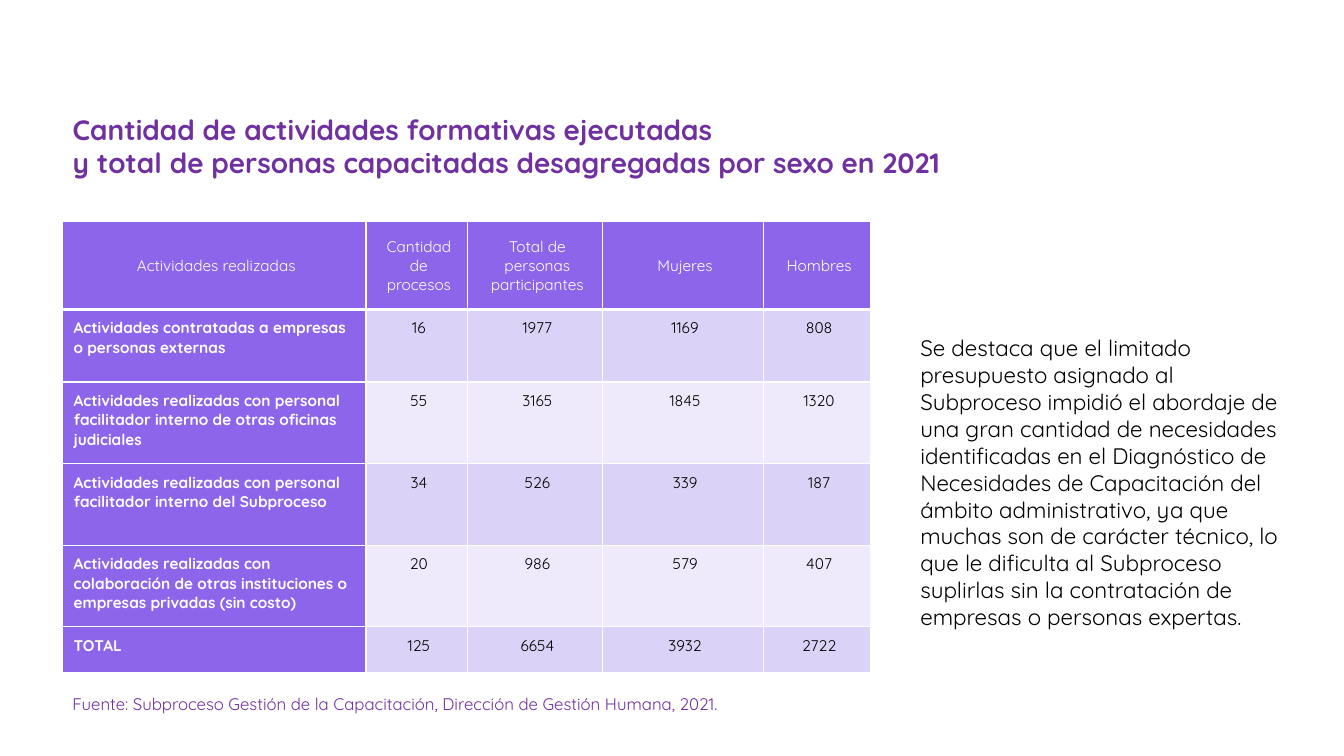
from lxml import etree
from pptx import Presentation
from pptx.dml.color import RGBColor
from pptx.enum import text as t
from pptx.oxml import ns
from pptx.util import Inches, Pt

FONT = "Quicksand"
PURPLE = RGBColor(0x70, 0x30, 0xA0)
VIOLET = RGBColor(0x8D, 0x65, 0xEA)
LILAC = RGBColor(0xDB, 0xD3, 0xF7)
PALE_LILAC = RGBColor(0xEE, 0xEA, 0xFB)
WHITE = RGBColor(0xFF, 0xFF, 0xFF)
BLACK = RGBColor(0, 0, 0)

TITLE = ("Cantidad de actividades formativas ejecutadas\v"
         "y total de personas capacitadas desagregadas por sexo en 2021")
SOURCE = "Fuente: Subproceso Gestión de la Capacitación, Dirección de Gestión Humana, 2021."
COMMENT = (
    "Se destaca que el limitado presupuesto asignado al Subproceso impidió el abordaje de "
    "una gran cantidad de necesidades identificadas en el Diagnóstico de Necesidades de "
    "Capacitación del ámbito administrativo, ya que muchas son de carácter técnico, lo que "
    "le dificulta al Subproceso suplirlas sin la contratación de empresas o personas expertas."
)
ACTIVITIES = [
    ("Actividades realizadas", "Cantidad de procesos", "Total de personas participantes",
     "Mujeres", "Hombres"),
    ("Actividades contratadas a empresas o personas externas", 16, 1977, 1169, 808),
    ("Actividades realizadas con personal facilitador interno de otras oficinas judiciales",
     55, 3165, 1845, 1320),
    ("Actividades realizadas con personal facilitador interno del Subproceso",
     34, 526, 339, 187),
    ("Actividades realizadas con colaboración de otras instituciones o empresas privadas "
     "(sin costo)", 20, 986, 579, 407),
    ("TOTAL", 125, 6654, 3932, 2722),
]
COLUMN_WIDTHS = [3.01, 1.01, 1.34, 1.59, 1.07]
ROW_HEIGHTS = [0.87, 0.72, 0.81, 0.81, 0.81, 0.45]


def write_text(frame, content, size, color, bold=False, align=t.PP_ALIGN.LEFT,
               anchor=t.MSO_ANCHOR.TOP):
    frame.word_wrap = True
    frame.vertical_anchor = anchor
    paragraph = frame.paragraphs[0]
    paragraph.text = content
    paragraph.alignment = align
    for run in paragraph.runs:
        font = run.font
        font.name, font.size, font.bold = FONT, Pt(size), bold
        font.color.rgb = color


def add_title(slide, left, top, width, height):
    title = slide.shapes.title
    title.left, title.top = Inches(left), Inches(top)
    title.width, title.height = Inches(width), Inches(height)
    write_text(title.text_frame, TITLE, 20, PURPLE, bold=True, anchor=t.MSO_ANCHOR.MIDDLE)


def add_text_box(slide, content, left, top, width, height, **text_format):
    box = slide.shapes.add_textbox(Inches(left), Inches(top), Inches(width), Inches(height))
    write_text(box.text_frame, content, **text_format)


def set_borders(cell, bottom_width, top_width):
    """Draw white cell borders, one point wide at the sides; must precede the fill."""
    properties = cell._tc.get_or_add_tcPr()
    for side, width in (("L", 1), ("R", 1), ("T", top_width), ("B", bottom_width)):
        line = etree.SubElement(properties, ns.qn(f"a:ln{side}"), w=str(Pt(width)))
        fill = etree.SubElement(line, ns.qn("a:solidFill"))
        etree.SubElement(fill, ns.qn("a:srgbClr"), val=str(WHITE))


def format_cell(cell, content, row, column):
    cell.margin_left, cell.margin_right = Inches(0.11), Inches(0.07)
    cell.margin_top = cell.margin_bottom = Inches(0.09)
    set_borders(cell, bottom_width=3 if row == 0 else 1, top_width=3 if row == 1 else 1)
    is_header, is_label = row == 0, column == 0
    cell.fill.solid()
    if is_header or is_label:
        cell.fill.fore_color.rgb = VIOLET
    else:
        cell.fill.fore_color.rgb = LILAC if row % 2 else PALE_LILAC
    anchor = t.MSO_ANCHOR.MIDDLE if is_header else t.MSO_ANCHOR.TOP
    write_text(
        cell.text_frame, str(content), 11,
        WHITE if is_header or is_label else BLACK,
        bold=is_label and not is_header,
        align=t.PP_ALIGN.LEFT if is_label and not is_header else t.PP_ALIGN.CENTER,
    )
    cell.vertical_anchor = anchor


def add_activities_table(slide, left, top):
    table = slide.shapes.add_table(
        len(ROW_HEIGHTS), len(COLUMN_WIDTHS), Inches(left), Inches(top),
        Inches(sum(COLUMN_WIDTHS)), Inches(sum(ROW_HEIGHTS))).table
    for column, width in zip(table.columns, COLUMN_WIDTHS):
        column.width = Inches(width)
    for row, height in zip(table.rows, ROW_HEIGHTS):
        row.height = Inches(height)
    for row, values in enumerate(ACTIVITIES):
        for column, value in enumerate(values):
            format_cell(table.cell(row, column), value, row, column)


def main():
    presentation = Presentation()
    presentation.slide_width, presentation.slide_height = Inches(13.33), Inches(7.5)
    slide = presentation.slides.add_slide(presentation.slide_layouts[5])
    add_title(slide, 0.62, 0.69, 11.87, 1.51)
    add_activities_table(slide, 0.62, 2.2)
    add_text_box(slide, SOURCE, 0.62, 6.83, 7.73, 0.3, size=12, color=PURPLE)
    add_text_box(slide, COMMENT, 9.03, 3.27, 3.76, 3.33, size=16, color=BLACK)
    presentation.save("out.pptx")


if __name__ == "__main__":
    main()
